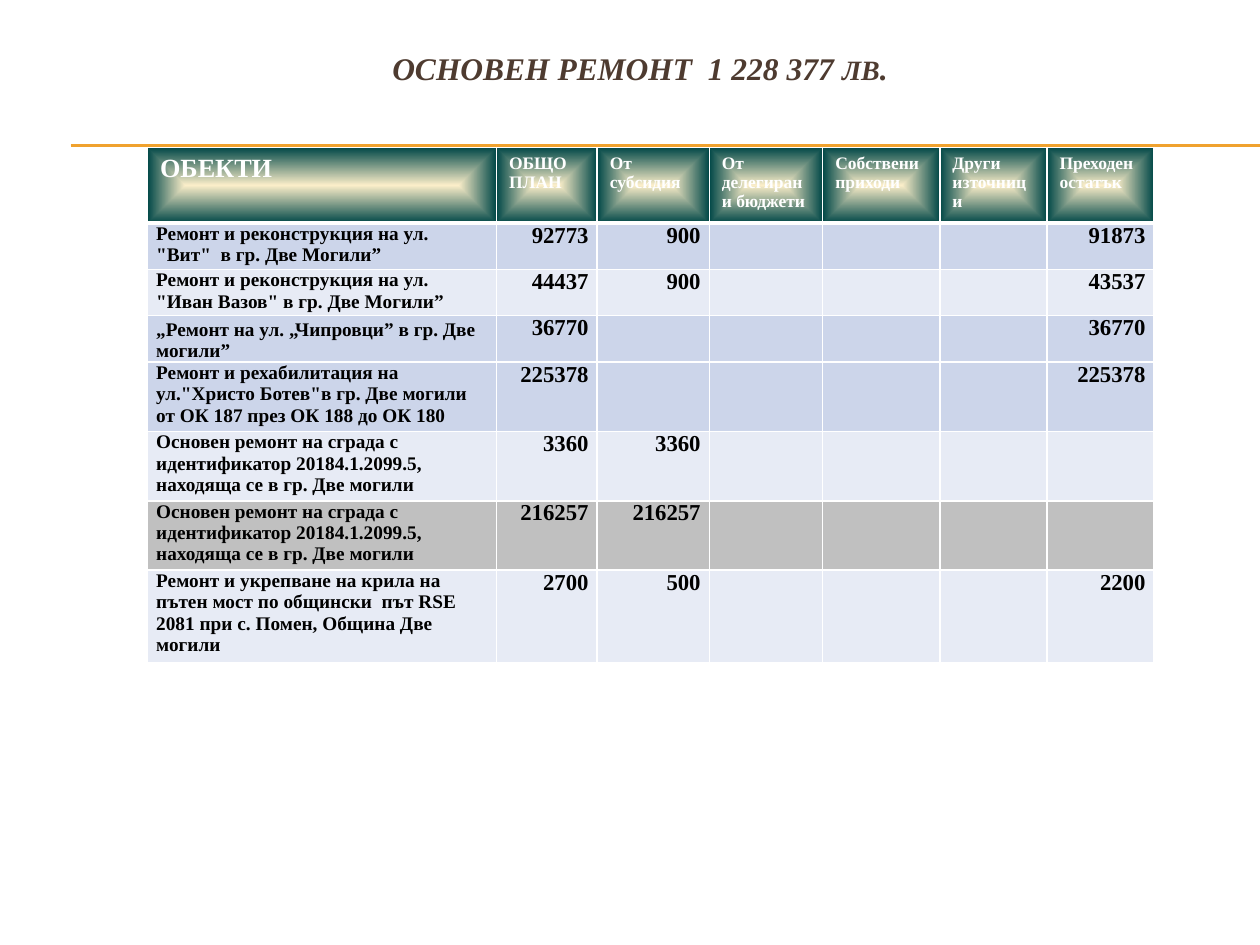
from lxml import etree
from pptx import Presentation
from pptx import util as u
from pptx.dml.color import RGBColor
from pptx.enum import shapes, text
from pptx.oxml import parse_xml
from pptx.oxml.ns import nsdecls, qn

# Content
FONT = "Times New Roman"
COLORS = {
    "rule": "F0A22E", "title": "4E3B30", "white": "FFFFFF", "black": "000000",
    "glow": "FBEEC9", "teal": "004747",
    "blue": "CCD5EA", "pale": "E7EBF5", "gray": "C0C0C0",
}
TITLE = [("ОСНОВЕН РЕМОНТ  1 228 377 ", 18), ("ЛВ", 16), (".", 18)]
HEADERS = ["ОБЕКТИ", "ОБЩО ПЛАН", "От субсидия", "От делегирани бюджети",
           "Собствени приходи", "Други източници", "Преходен остатък"]
COLUMN_WIDTHS = [2.77, 0.8, 0.89, 0.9, 0.93, 0.85, 0.85]
HEADER_HEIGHT = 0.55
BUILDING = ("Основен ремонт на сграда с идентификатор 20184.1.2099.5, "
            "находяща се в гр. Две могили")
# Project, total plan, subsidy, carried-over balance, fill, row height
PROJECTS = [
    ("Ремонт и реконструкция на ул. \"Вит\"  в гр. Две Могили”",
     "92773", "900", "91873", "blue", 0.35),
    ("Ремонт и реконструкция на ул. \"Иван Вазов\" в гр. Две Могили”",
     "44437", "900", "43537", "pale", 0.36),
    ("„Ремонт на ул. „Чипровци” в гр. Две могили”",
     "36770", "", "36770", "blue", 0.34),
    ("Ремонт и рехабилитация на ул.\"Христо Ботев\"в гр. Две могили "
     "от ОК 187 през ОК 188 до ОК 180",
     "225378", "", "225378", "blue", 0.51),
    (BUILDING, "3360", "3360", "", "pale", 0.51),
    (BUILDING, "216257", "216257", "", "gray", 0.51),
    ("Ремонт и укрепване на крила на пътен мост по общински  път RSE 2081 "
     "при с. Помен, Община Две могили",
     "2700", "500", "2200", "pale", 0.68),
]


def color(name):
    return RGBColor.from_string(COLORS[name])


def add_span(para, words, size, shade, italic=False):
    span = para.add_run()
    span.text = words
    font = span.font
    font.name, font.size, font.bold, font.italic = FONT, u.Pt(size), True, italic
    font.color.rgb = color(shade)


def set_borders(cell, top, bottom):
    widths = {"lnL": 1, "lnR": 1, "lnT": top, "lnB": bottom}
    for index, (side, width) in enumerate(widths.items()):
        cell._tc.get_or_add_tcPr().insert(index, parse_xml(
            f'<a:{side} {nsdecls("a")} w="{u.Pt(width)}"><a:solidFill>'
            f'<a:srgbClr val="{COLORS["white"]}"/></a:solidFill></a:{side}>'))


def fill_glow(cell):
    cell._tc.get_or_add_tcPr().append(parse_xml(
        f'<a:gradFill {nsdecls("a")} rotWithShape="1"><a:gsLst>'
        f'<a:gs pos="0"><a:srgbClr val="{COLORS["glow"]}"/></a:gs>'
        f'<a:gs pos="100000"><a:srgbClr val="{COLORS["teal"]}"/></a:gs></a:gsLst>'
        '<a:path path="shape"><a:fillToRect l="50000" t="50000" r="50000" b="50000"/>'
        '</a:path></a:gradFill>'))


deck = Presentation()
deck.slide_width, deck.slide_height = u.Inches(10), u.Inches(7.5)
page = deck.slides.add_slide(deck.slide_layouts[6])

# Double rule under the title
for y in (1.15, 1.16):
    rule = page.shapes.add_connector(
        shapes.MSO_CONNECTOR.STRAIGHT,
        u.Inches(0.56), u.Inches(y), u.Inches(10), u.Inches(y))
    rule.line.color.rgb = color("rule")
    rule.line.width = u.Pt(0.75)
    etree.SubElement(rule._element.spPr, qn("a:effectLst"))

# Title
box = page.shapes.add_textbox(u.Inches(1.08), u.Inches(0.33), u.Inches(8), u.Inches(0.42))
frame = box.text_frame
frame.word_wrap = True
frame.vertical_anchor = text.MSO_ANCHOR.MIDDLE
para = frame.paragraphs[0]
para.alignment = text.PP_ALIGN.CENTER
for words, size in TITLE:
    add_span(para, words, size, "title", italic=True)

# Table grid
heights = [HEADER_HEIGHT] + [project[-1] for project in PROJECTS]
table = page.shapes.add_table(
    len(heights), len(HEADERS), u.Inches(1.17), u.Inches(1.17),
    u.Inches(sum(COLUMN_WIDTHS)), u.Inches(sum(heights))).table
table.first_row = table.horz_banding = False
for column, width in zip(table.columns, COLUMN_WIDTHS):
    column.width = u.Inches(width)
for row, height in zip(table.rows, heights):
    row.height = u.Inches(height)

# Header row
for index, label in enumerate(HEADERS):
    cell = table.cell(0, index)
    add_span(cell.text_frame.paragraphs[0], label, 10 if index else 15, "white")
    fill_glow(cell)
    set_borders(cell, 1, 3)

# Project rows
for row, (name, plan, subsidy, balance, shade, _) in enumerate(PROJECTS, 1):
    for index, words in enumerate([name, plan, subsidy, "", "", "", balance]):
        cell = table.cell(row, index)
        cell.margin_left = cell.margin_right = u.Inches(0.07)
        cell.margin_top = cell.margin_bottom = 0
        cell.fill.solid()
        cell.fill.fore_color.rgb = color(shade)
        set_borders(cell, 3 if row == 1 else 1, 1)
        para = cell.text_frame.paragraphs[0]
        if index:
            para.alignment = text.PP_ALIGN.RIGHT
        if words:
            add_span(para, words, 13 if index else 11, "black")
        else:
            para.font.size = u.Pt(13)
    if name.startswith("„"):
        table.cell(row, 0).vertical_anchor = text.MSO_ANCHOR.BOTTOM

deck.save("out.pptx")
